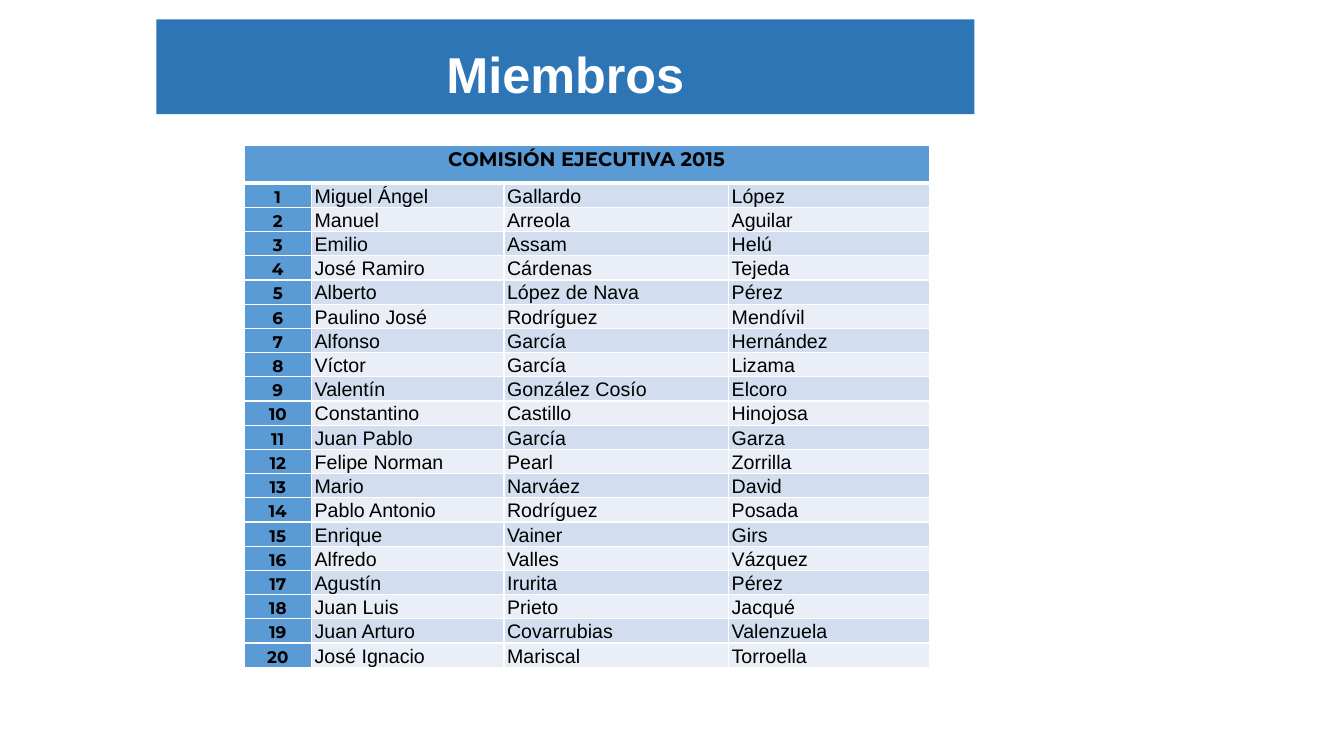
from dataclasses import dataclass

from lxml.etree import SubElement
from pptx import Presentation
from pptx.dml.color import RGBColor
from pptx.enum.shapes import MSO_SHAPE
from pptx.enum.text import MSO_ANCHOR, PP_ALIGN
from pptx.oxml.ns import qn
from pptx.util import Cm, Pt


@dataclass(frozen=True)
class Theme:
    banner: str = "2E75B6"
    heading: str = "5B9BD5"
    bands: tuple = ("D2DEEF", "EAEFF7")
    white: str = "FFFFFF"
    black: str = "000000"
    body_font: str = "Arial"
    heading_font: str = "Montserrat"
    title_size: int = 36
    body_size: int = 14
    number_size: int = 12


theme = Theme()


def write(frame, text, *, size, font=theme.body_font, color=theme.black,
          bold=False, align=PP_ALIGN.LEFT, spacing=1.07):
    paragraph = frame.paragraphs[0]
    paragraph.alignment = align
    paragraph.line_spacing = spacing
    run = paragraph.add_run()
    run.text = text
    run.font.size = Pt(size)
    run.font.name = font
    run.font.bold = bold
    run.font.color.rgb = RGBColor.from_string(color)


def style_cell(cell, fill, top=1, bottom=1):
    cell.vertical_anchor = MSO_ANCHOR.BOTTOM
    cell.margin_left = cell.margin_right = Cm(0.08)
    cell.margin_top = cell.margin_bottom = 0
    properties = cell._tc.get_or_add_tcPr()
    for side, width in (("L", 1), ("R", 1), ("T", top), ("B", bottom)):
        border = SubElement(properties, qn(f"a:ln{side}"), w=str(Pt(width)))
        color = SubElement(border, qn("a:solidFill"))
        SubElement(color, qn("a:srgbClr"), val=theme.white)
    cell.fill.solid()
    cell.fill.fore_color.rgb = RGBColor.from_string(fill)


members = [
    ("Miguel Ángel", "Gallardo", "López"),
    ("Manuel", "Arreola", "Aguilar"),
    ("Emilio", "Assam", "Helú"),
    ("José Ramiro", "Cárdenas", "Tejeda"),
    ("Alberto", "López de Nava", "Pérez"),
    ("Paulino José", "Rodríguez", "Mendívil"),
    ("Alfonso", "García", "Hernández"),
    ("Víctor", "García", "Lizama"),
    ("Valentín", "González Cosío", "Elcoro"),
    ("Constantino", "Castillo", "Hinojosa"),
    ("Juan Pablo", "García", "Garza"),
    ("Felipe Norman", "Pearl", "Zorrilla"),
    ("Mario", "Narváez", "David"),
    ("Pablo Antonio", "Rodríguez", "Posada"),
    ("Enrique", "Vainer", "Girs"),
    ("Alfredo", "Valles", "Vázquez"),
    ("Agustín", "Irurita", "Pérez"),
    ("Juan Luis", "Prieto", "Jacqué"),
    ("Juan Arturo", "Covarrubias", "Valenzuela"),
    ("José Ignacio", "Mariscal", "Torroella"),
]

presentation = Presentation()
presentation.slide_width, presentation.slide_height = Cm(33.87), Cm(19.05)
slide = presentation.slides.add_slide(presentation.slide_layouts[6])

# Title banner
banner = slide.shapes.add_shape(
    MSO_SHAPE.RECTANGLE, Cm(3.94), Cm(0.49), Cm(20.62), Cm(2.39))
banner.shadow.inherit = False
banner.fill.solid()
banner.fill.fore_color.rgb = RGBColor.from_string(theme.banner)
banner.line.fill.background()
banner_text = banner.text_frame
banner_text.word_wrap = True
banner_text.vertical_anchor = MSO_ANCHOR.BOTTOM
banner_text.margin_left = banner_text.margin_right = Cm(0.25)
banner_text.margin_top = banner_text.margin_bottom = Cm(0.25)
write(banner_text, "Miembros", size=theme.title_size, color=theme.white,
      bold=True, align=PP_ALIGN.CENTER, spacing=0.9)

# Committee table
column_widths = (1.7, 4.85, 5.66, 5.06)
heading_height, member_height = 0.92, 0.61
committee = slide.shapes.add_table(
    len(members) + 1, len(column_widths), Cm(6.15), Cm(3.67),
    Cm(sum(column_widths)),
    Cm(heading_height + member_height * len(members))).table
committee.first_row = committee.horz_banding = False
for column, width in zip(committee.columns, column_widths):
    column.width = Cm(width)
for row in committee.rows:
    row.height = Cm(member_height)
committee.rows[0].height = Cm(heading_height)

# Heading across all columns
for cell in committee.rows[0].cells:
    style_cell(cell, theme.heading, bottom=3)
heading = committee.cell(0, 0)
heading.merge(committee.cell(0, len(column_widths) - 1))
heading.margin_bottom = Cm(0.3)
write(heading.text_frame, "COMISIÓN EJECUTIVA 2015", size=theme.body_size,
      font=theme.heading_font, bold=True, align=PP_ALIGN.CENTER)

# Numbered members in alternating bands
for number, names in enumerate(members, start=1):
    top = 3 if number == 1 else 1
    number_cell = committee.cell(number, 0)
    style_cell(number_cell, theme.heading, top=top)
    write(number_cell.text_frame, str(number), size=theme.number_size,
          font=theme.heading_font, bold=True, align=PP_ALIGN.CENTER)
    for position, name in enumerate(names, start=1):
        name_cell = committee.cell(number, position)
        style_cell(name_cell, theme.bands[(number - 1) % 2], top=top)
        write(name_cell.text_frame, name, size=theme.body_size)

presentation.save("out.pptx")
